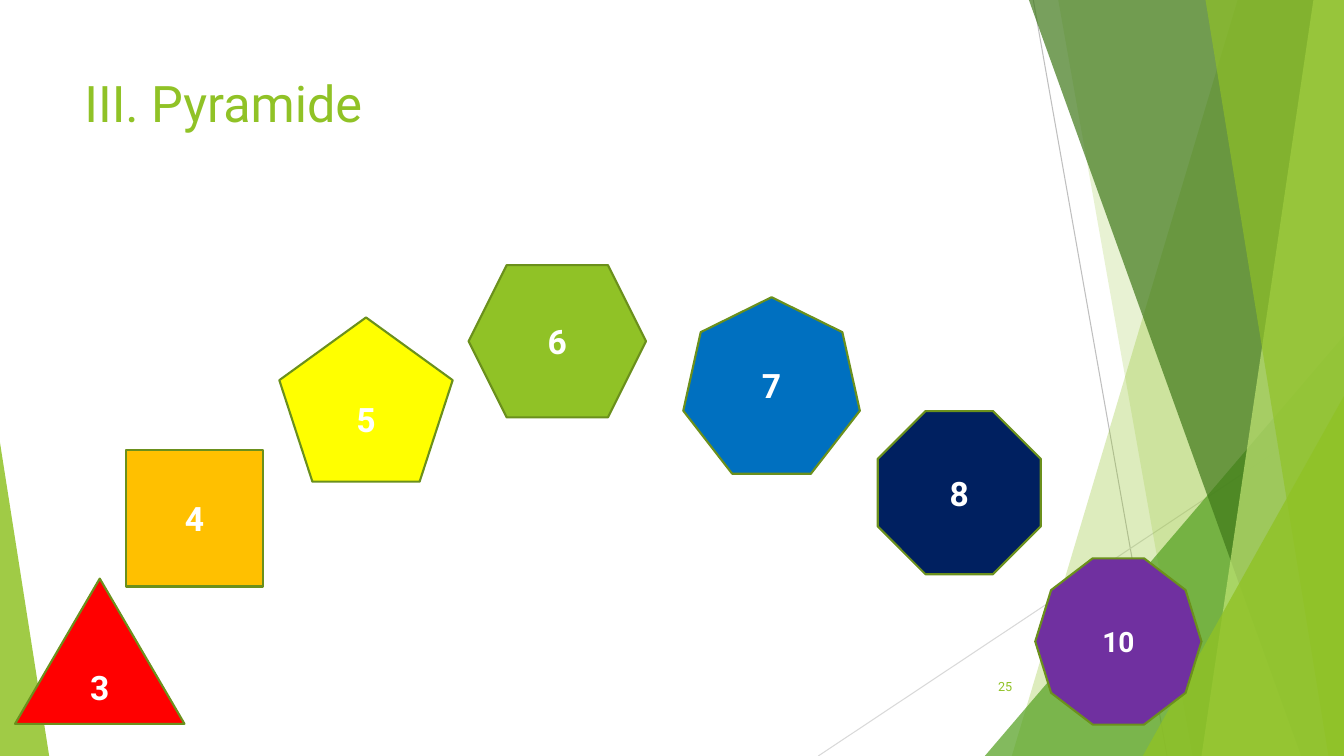
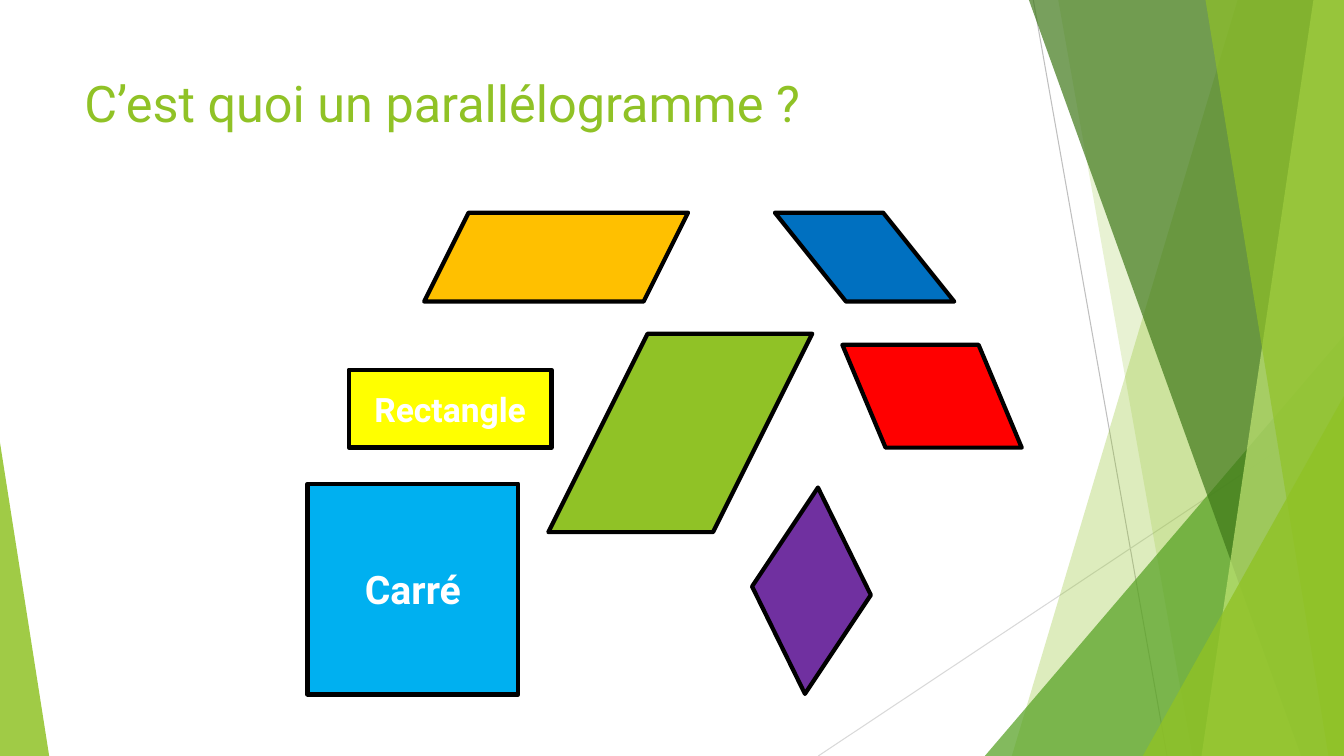
from lxml import etree
from pptx import Presentation
from pptx import util as u
from pptx.dml.color import RGBColor
from pptx.enum import shapes, text
from pptx.oxml.ns import qn

W, H = 33.87, 19.05
FONT = "Roboto"
G = shapes.MSO_SHAPE
COLORS = {
    "green": "90C226", "leaf": "54A021", "forest": "3F7819", "lime": "C0E474",
    "olive": "6B901C", "grey": "BFBFBF", "silver": "D9D9D9", "black": "000000",
    "white": "FFFFFF", "orange": "FFC000", "yellow": "FFFF00", "red": "FF0000",
    "blue": "0070C0", "navy": "002060", "purple": "7030A0", "sky": "00B0F0",
}
TITLE = {"size": u.Pt(36), "bold": False}
NUMBER = {"size": u.Pt(9), "bold": False}
LABEL = {"size": u.Pt(24), "bold": True}
SMALL_LABEL = {**LABEL, "size": u.Pt(20)}
BIG_LABEL = {**LABEL, "size": u.Pt(28)}

RAYS = [
    ("grey", (26.04, 0), (29.41, H)),
    ("silver", (W, 10.24), (20.62, H)),
]
FACETS = [
    ("ribbon", (31.19, 25.5), "green", 30),
    ("ribbon", (26.67, 30.05), "green", 20),
    ("wedge", (24.82, 8.46, W, 1), "leaf", 72),
    ("ribbon", (25.93, 32.79), "forest", 70),
    ("ribbon", (33.1, 30.28), "lime", 70),
    ("ribbon", (30.38, 33.48), "green", 65),
    ("wedge", (28.8, 9.98, W, 1), "green", 80),
    ("wedge", (0, 11.15, 1.24, 0), "green", 85),
]
POLYGONS = [
    ("4", G.RECTANGLE, (3.18, 11.33, 3.45, 3.45), "orange", LABEL),
    ("5", G.REGULAR_PENTAGON, (7.04, 8, 4.37, 4.14), "yellow", LABEL),
    ("3", G.ISOSCELES_TRIANGLE, (0.38, 14.58, 4.27, 3.66), "red", LABEL),
    ("6", G.HEXAGON, (11.81, 6.68, 4.47, 3.84), "green", LABEL),
    ("7", G.HEPTAGON, (17.22, 7.49, 4.45, 4.45), "blue", LABEL),
    ("8", G.OCTAGON, (22.12, 10.36, 4.11, 4.11), "navy", LABEL),
    ("10", G.DECAGON, (26.09, 14.07, 4.19, 4.19), "purple", SMALL_LABEL),
]
PARALLELOGRAMS = [
    ((13.82, 8.41, 6.65, 5), "green", 0.5, False, 0),
    ((10.69, 5.36, 6.65, 2.24), "orange", 0.5, False, 0),
    ((19.53, 5.36, 4.52, 2.24), "blue", 0.8, True, 0),
    ((21.23, 8.69, 4.52, 2.59), "red", 0.42, True, 0),
    ((18.19, 13.59, 4.52, 2.59), "purple", 0.58, True, 63.8),
]
RECTANGLES = [
    ("Rectangle", (8.79, 9.32, 5.11, 1.96), "yellow", LABEL),
    ("Carré", (7.75, 12.19, 5.31, 5.31), "sky", BIG_LABEL),
]


def rgb(name):
    return RGBColor.from_string(COLORS[name])


def cm(values):
    return [u.Cm(v) for v in values]


def write(sp, words, fmt, color, align, anchor):
    tf = sp.text_frame
    tf.word_wrap = True
    tf.vertical_anchor = anchor
    p = tf.paragraphs[0]
    p.alignment = align
    r = p.add_run()
    r.text = words
    for key, value in {"name": FONT, **fmt}.items():
        setattr(r.font, key, value)
    r.font.color.rgb = rgb(color)


def add_text(s, words, box, fmt, align, anchor):
    sp = s.shapes.add_textbox(*cm(box))
    write(sp, words, fmt, "green", align, anchor)


def paint(sp, fill, line=None, width=0):
    sp.shadow.inherit = False
    sp.fill.solid()
    sp.fill.fore_color.rgb = rgb(fill)
    if line:
        sp.line.color.rgb = rgb(line)
        sp.line.width = u.Pt(width)
    else:
        sp.line.fill.background()


def set_opacity(sp, percent):
    clr = sp._element.spPr.find(qn("a:solidFill"))[0]
    etree.SubElement(clr, qn("a:alpha")).set("val", str(percent * 1000))


def add_ray(s, color, start, end):
    line = s.shapes.add_connector(shapes.MSO_CONNECTOR.STRAIGHT, *cm(start + end))
    line.line.color.rgb = rgb(color)
    line.line.width = u.Pt(0.75)
    etree.SubElement(line._element.spPr, qn("a:effectLst"))


def add_ribbon(s, top_x, bottom_x):
    outline = s.shapes.build_freeform(u.Cm(top_x), 0)
    corners = [(W, 0), (W, H), (bottom_x, H)]
    outline.add_line_segments([cm(c) for c in corners], close=True)
    return outline.convert_to_shape()


def add_wedge(s, left, top, right, apex):
    box = cm((left, top, right - left, H - top))
    sp = s.shapes.add_shape(G.ISOSCELES_TRIANGLE, *box)
    sp.adjustments[0] = apex
    return sp


def add_backdrop(s):
    for ray in RAYS:
        add_ray(s, *ray)
    makers = {"ribbon": add_ribbon, "wedge": add_wedge}
    for kind, geometry, color, opacity in FACETS:
        sp = makers[kind](s, *geometry)
        paint(sp, color)
        set_opacity(sp, opacity)


def add_figure(s, kind, box, fill, line, width):
    sp = s.shapes.add_shape(kind, *cm(box))
    paint(sp, fill, line, width)
    return sp


def add_labelled(s, words, kind, box, fill, fmt, line, width):
    sp = add_figure(s, kind, box, fill, line, width)
    write(sp, words, fmt, "white", text.PP_ALIGN.CENTER, text.MSO_ANCHOR.MIDDLE)


def add_parallelogram(s, box, fill, slant, flipped, angle):
    sp = add_figure(s, G.PARALLELOGRAM, box, fill, "black", 3)
    sp.adjustments[0] = slant
    sp.rotation = angle
    if flipped:
        sp._element.spPr.get_or_add_xfrm().set("flipH", "1")


def add_slide(prs, title):
    s = prs.slides.add_slide(prs.slide_layouts[6])
    add_backdrop(s)
    add_text(s, title, (1.88, 1.7, 23.88, 3.66), TITLE,
             text.PP_ALIGN.LEFT, text.MSO_ANCHOR.TOP)
    return s


def main():
    prs = Presentation()
    prs.slide_width, prs.slide_height = cm((W, H))

    s = add_slide(prs, "III. Pyramide")
    add_text(s, "25", (23.85, 16.79, 1.91, 1.02), NUMBER,
             text.PP_ALIGN.RIGHT, text.MSO_ANCHOR.MIDDLE)
    for polygon in POLYGONS:
        add_labelled(s, *polygon, "olive", 1.5)

    s = add_slide(prs, "C’est quoi un parallélogramme ?")
    for parallelogram in PARALLELOGRAMS:
        add_parallelogram(s, *parallelogram)
    for words, box, fill, fmt in RECTANGLES:
        add_labelled(s, words, G.RECTANGLE, box, fill, fmt, "black", 3)

    prs.save("out.pptx")


if __name__ == "__main__":
    main()
